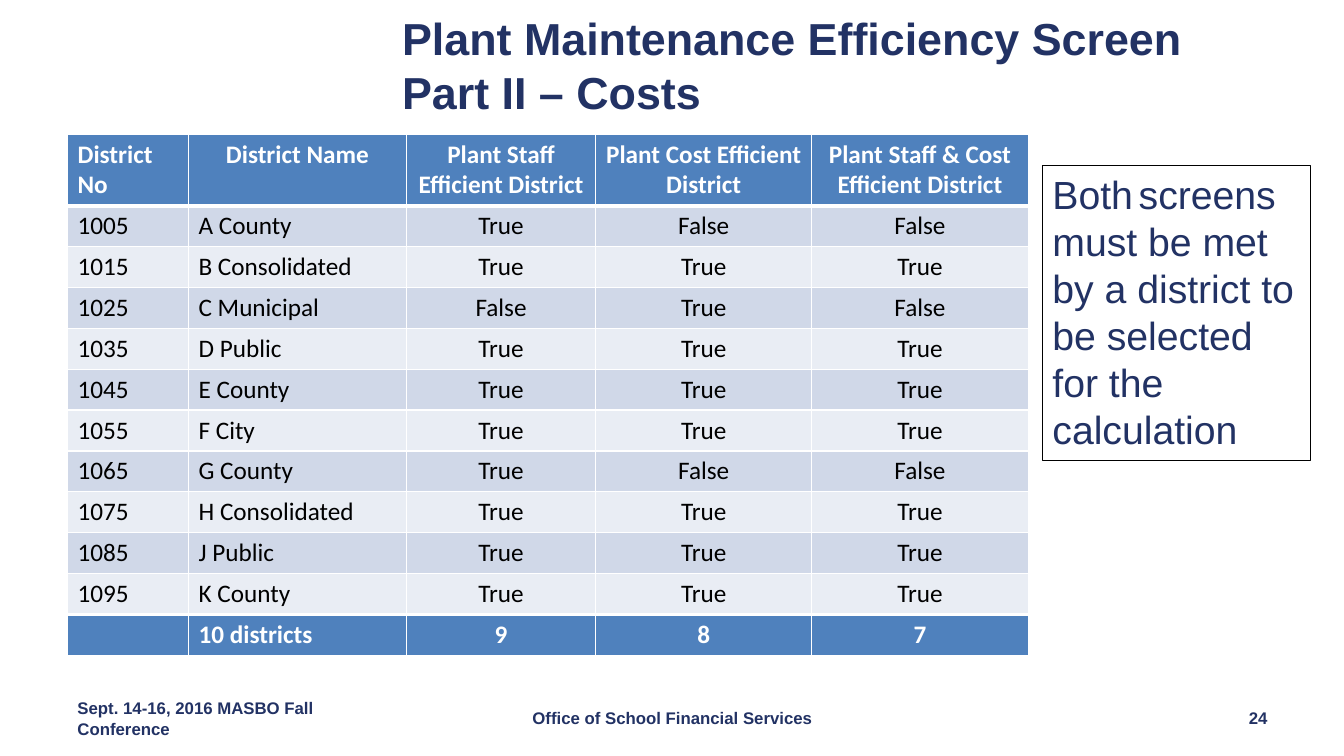
from pptx import Presentation
from pptx.dml.color import RGBColor
from pptx.enum.shapes import MSO_SHAPE
from pptx.enum.text import MSO_ANCHOR, PP_ALIGN
from pptx.oxml import parse_xml
from pptx.oxml.ns import nsdecls
from pptx.util import Inches, Pt

LEFT, CENTER, RIGHT = PP_ALIGN.LEFT, PP_ALIGN.CENTER, PP_ALIGN.RIGHT
TOP, MIDDLE = MSO_ANCHOR.TOP, MSO_ANCHOR.MIDDLE
RECTANGLE = MSO_SHAPE.RECTANGLE

NAVY = RGBColor(0x22, 0x32, 0x64)
BLUE = RGBColor(0x4F, 0x81, 0xBD)
DARK_BAND = RGBColor(0xD0, 0xD8, 0xE8)
LIGHT_BAND = RGBColor(0xE9, 0xED, 0xF4)
WHITE = RGBColor(0xFF, 0xFF, 0xFF)
BLACK = RGBColor(0, 0, 0)

COLUMN_WIDTHS = [1.2, 2.16, 1.88, 2.14, 2.15]
HEADER_HEIGHT, ROW_HEIGHT = 0.64, 0.37
HEADINGS = ["District No", "District Name", "Plant Staff Efficient District",
            "Plant Cost Efficient District", "Plant Staff & Cost Efficient District"]
DISTRICTS = [
    ("A County", True, False),
    ("B Consolidated", True, True),
    ("C Municipal", False, True),
    ("D Public", True, True),
    ("E County", True, True),
    ("F City", True, True),
    ("G County", True, False),
    ("H Consolidated", True, True),
    ("J Public", True, True),
    ("K County", True, True),
]


def screen_rows():
    rows = [HEADINGS]
    for index, (name, staff, cost) in enumerate(DISTRICTS):
        rows.append([str(1005 + 10 * index), name, str(staff), str(cost), str(staff and cost)])
    totals = [sum(row[column] == "True" for row in rows) for column in (2, 3, 4)]
    rows.append(["", f"{len(DISTRICTS)} districts", *map(str, totals)])
    return rows


class SlideBuilder:
    def __init__(self, page):
        self.page = page

    def style(self, font, size, name="Arial", color=NAVY, bold=False):
        font.size, font.name, font.bold = Pt(size), name, bold
        font.color.rgb = color

    def text(self, words, left, top, width, height, size, align=LEFT, anchor=TOP):
        box = self.page.shapes.add_textbox(Inches(left), Inches(top), Inches(width), Inches(height))
        frame = box.text_frame
        frame.word_wrap = True
        frame.vertical_anchor = anchor
        para = frame.paragraphs[0]
        para.text = words
        para.alignment = align
        self.style(para.font, size, bold=True)

    def note(self, spans, left, top, width, height):
        box = self.page.shapes.add_shape(
            RECTANGLE, Inches(left), Inches(top), Inches(width), Inches(height))
        box.shadow.inherit = False
        box.fill.background()
        box.line.color.rgb = BLACK
        box.line.width = Pt(1)
        frame = box.text_frame
        frame.word_wrap = True
        frame.vertical_anchor = TOP
        para = frame.paragraphs[0]
        para.alignment = LEFT
        for words, size, name, color in spans:
            span = para.add_run()
            span.text = words
            self.style(span.font, size, name, color)

    def borders(self, cell, top, bottom):
        properties = cell._tc.get_or_add_tcPr()
        sides = [("lnL", 1), ("lnR", 1), ("lnT", top), ("lnB", bottom)]
        for position, (side, width) in enumerate(sides):
            properties.insert(position, parse_xml(
                f'<a:{side} {nsdecls("a")} w="{Pt(width)}"><a:solidFill>'
                f'<a:srgbClr val="{WHITE}"/></a:solidFill></a:{side}>'))

    def table(self, rows, left, top):
        last = len(rows) - 1
        height = HEADER_HEIGHT + ROW_HEIGHT * last
        table = self.page.shapes.add_table(
            len(rows), len(COLUMN_WIDTHS), Inches(left), Inches(top),
            Inches(sum(COLUMN_WIDTHS)), Inches(height)).table
        for column, width in zip(table.columns, COLUMN_WIDTHS):
            column.width = Inches(width)
        for index, values in enumerate(rows):
            table.rows[index].height = Inches(ROW_HEIGHT if index else HEADER_HEIGHT)
            accent = index in (0, last)
            band = DARK_BAND if index % 2 else LIGHT_BAND
            for column, words in enumerate(values):
                cell = table.cell(index, column)
                cell.fill.solid()
                cell.fill.fore_color.rgb = BLUE if accent else band
                self.borders(cell, 3 if index in (1, last) else 1,
                             3 if index in (0, last - 1) else 1)
                para = cell.text_frame.paragraphs[0]
                para.text = words
                centered = column > 1 or (index == 0 and column == 1)
                para.alignment = CENTER if centered else LEFT
                self.style(para.font, 18, "Calibri", WHITE if accent else BLACK, accent)


def main():
    deck = Presentation()
    deck.slide_width, deck.slide_height = Inches(13.33), Inches(7.5)
    builder = SlideBuilder(deck.slides.add_slide(deck.slide_layouts[6]))
    builder.table(screen_rows(), 0.67, 1.33)
    builder.text("Plant Maintenance Efficiency Screen Part II – Costs", 3.89, 0.06, 7.99, 1.17, 32)
    footers = [
        ("Sept. 14-16, 2016 MASBO Fall Conference", 0.67, 3.11, LEFT),
        ("Office of School Financial Services", 4.56, 4.22, CENTER),
        ("24", 9.56, 3.11, RIGHT),
    ]
    for words, left, width, align in footers:
        builder.text(words, left, 6.85, width, 0.55, 12, align, MIDDLE)
    builder.note([
        ("Both", 28, "Arial", NAVY),
        (" ", 18, "Calibri", BLACK),
        ("screens must be met by a district to be selected for the calculation", 28, "Arial", NAVY),
    ], 10.34, 1.64, 2.66, 2.93)
    deck.save("out.pptx")


if __name__ == "__main__":
    main()
